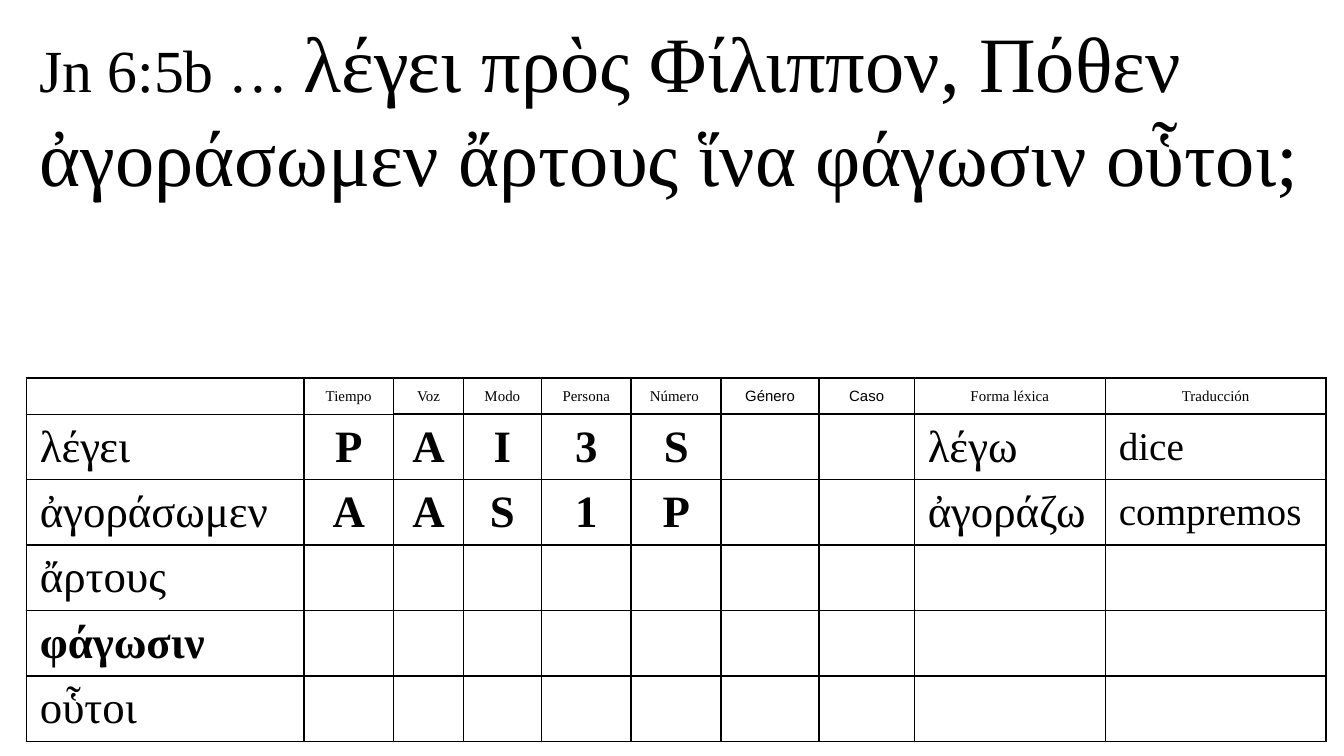
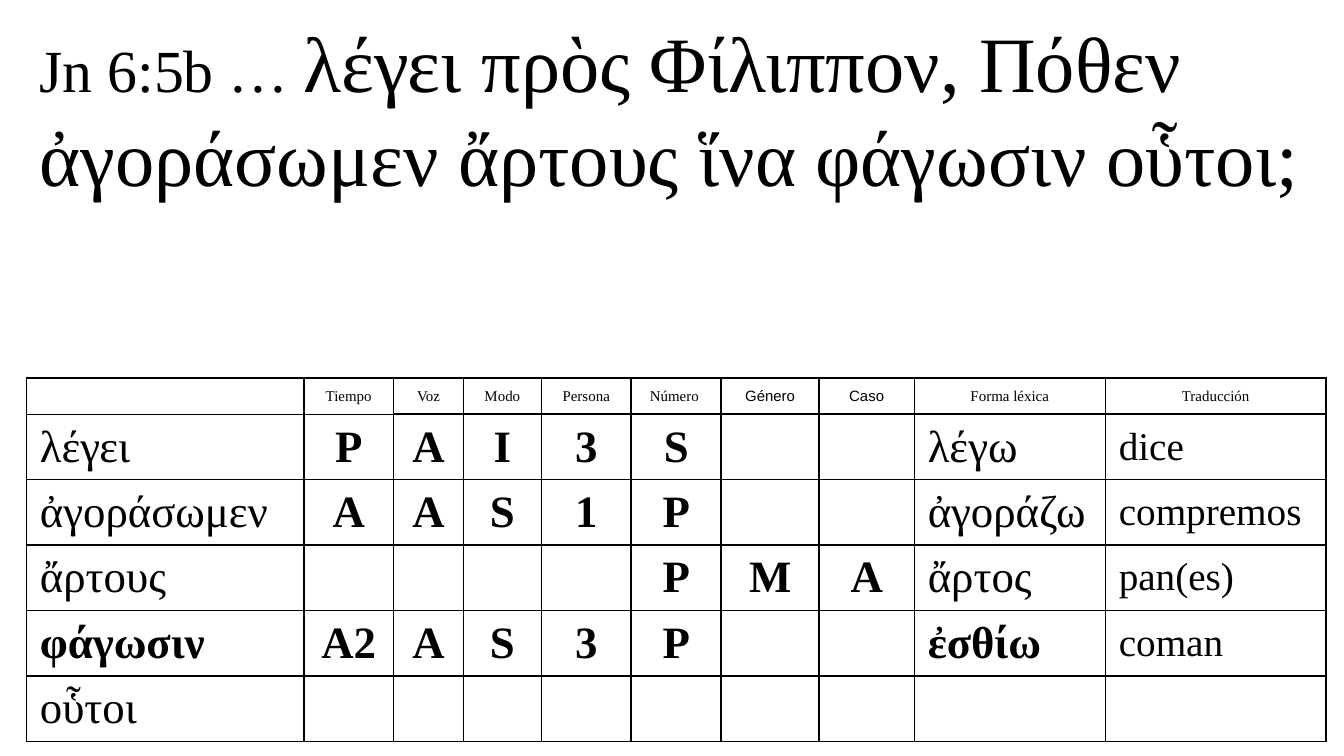
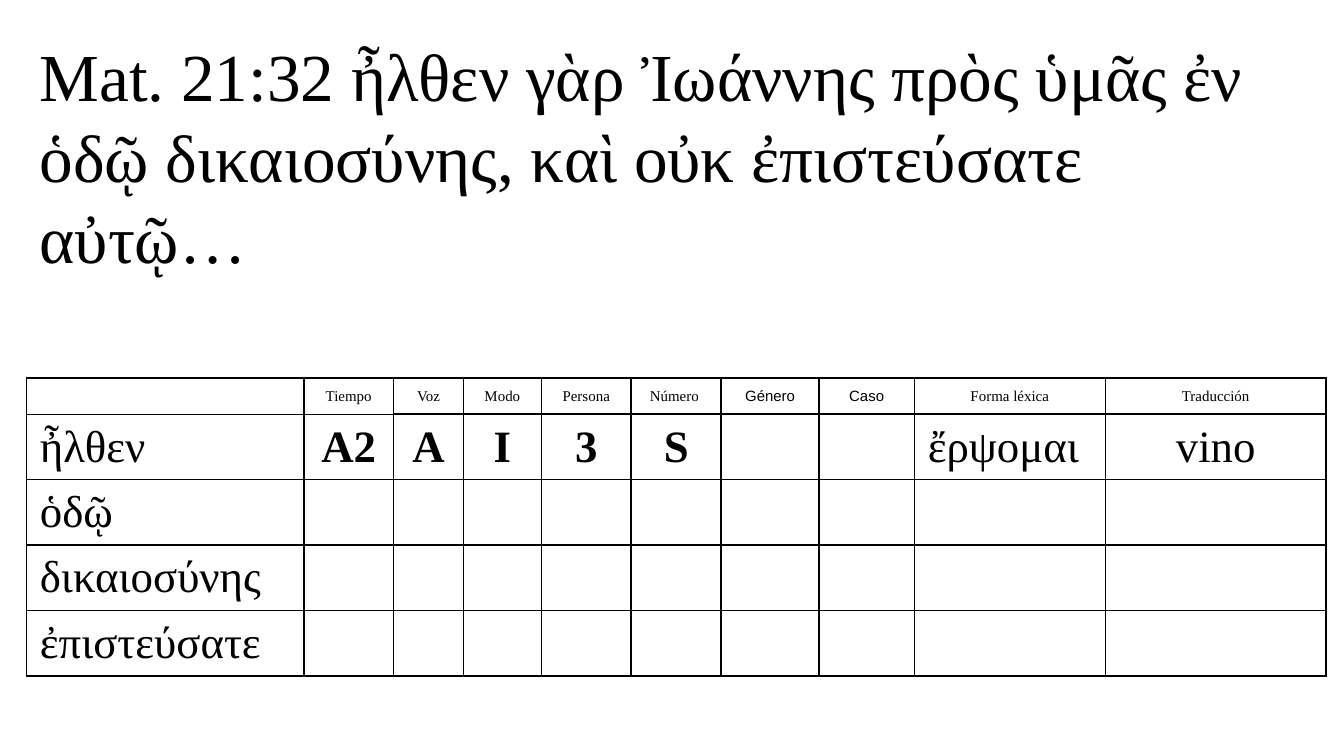
from lxml import etree
from pptx import Presentation
from pptx.dml.color import RGBColor
from pptx.enum import text
from pptx.oxml.ns import qn
from pptx.util import Cm, Pt

BLACK = RGBColor(0, 0, 0)
SERIF, SANS = "Times New Roman", "Arial"

HEADERS = ["", "Tiempo", "Voz", "Modo", "Persona", "Número ", "Género", "Caso",
           "Forma léxica", "Traducción"]
SANS_HEADERS = ("Género", "Caso")
BOLD_WORDS = ("φάγωσιν", "ἐσθίω")
COL_WIDTHS = [5.24, 1.7, 1.32, 1.47, 1.7, 1.7, 1.85, 1.8, 3.61, 4.17]
HEADER_H, ROW_H = 0.69, 1.21
LEFT, TABLE_TOP, TITLE_W = 0.5, 7.14, 24.4
WORD, LEXICAL, MEANING = 0, 8, 9

JOHN_TITLE = [("Jn 6:5b … ", 32),
              ("λέγει πρὸς Φίλιππον, Πόθεν ἀγοράσωμεν ἄρτους ἵνα φάγωσιν οὗτοι;", 42)]
MATTHEW_TITLE = [("Mat. 21:32 ἦλθεν γὰρ Ἰωάννης πρὸς ὑμᾶς ἐν ὁδῷ δικαιοσύνης, "
                  "καὶ οὐκ ἐπιστεύσατε αὐτῷ…", 36)]

JOHN_ROWS = [
    ["λέγει", "P", "A", "I", "3", "S", "", "", "λέγω", "dice"],
    ["ἀγοράσωμεν", "A", "A", "S", "1", "P", "", "", "ἀγοράζω", "compremos"],
    ["ἄρτους", "", "", "", "", "P", "M", "A", "ἄρτος", "pan(es)"],
    ["φάγωσιν", "A2", "A", "S", "3", "P", "", "", "ἐσθίω", "coman"],
    ["οὗτοι"],
]
MATTHEW_ROWS = [
    ["ἦλθεν", "A2", "A", "I", "3", "S", "", "", "ἔρψομαι", "vino"],
    ["ὁδῷ"],
    ["δικαιοσύνης"],
    ["ἐπιστεύσατε"],
]


def parsed_up_to(rows, count):
    return rows[:count] + [row[:1] for row in rows[count:]]


SLIDES = [
    dict(title=JOHN_TITLE, top=0.15, height=3.84, rows=parsed_up_to(JOHN_ROWS, 2),
         meaning=(21, False)),
    dict(title=JOHN_TITLE, top=0.15, height=3.84, rows=JOHN_ROWS, meaning=(21, False)),
    dict(title=MATTHEW_TITLE, top=0.53, height=3.33, rows=MATTHEW_ROWS, meaning=(24, True)),
]


def set_font(font, size, name=SERIF, bold=False):
    font.size, font.name, font.bold = Pt(size), name, bold
    font.color.rgb = BLACK


def add_title(s, runs, top, height):
    tf = s.shapes.add_textbox(Cm(LEFT), Cm(top), Cm(TITLE_W), Cm(height)).text_frame
    tf.word_wrap = True
    tf.auto_size = text.MSO_AUTO_SIZE.SHAPE_TO_FIT_TEXT
    p = tf.paragraphs[0]
    for words, size in runs:
        r = p.add_run()
        r.text = words
        set_font(r.font, size)


def set_borders(cell, row, col):
    across = 0.75 if col < 2 else 1
    widths = {"L": 1, "R": 1, "T": across if row else 1, "B": across}
    tcPr = cell._tc.get_or_add_tcPr()
    for i, (side, width) in enumerate(widths.items()):
        ln = etree.Element(qn(f"a:ln{side}"), w=str(Pt(width)))
        fill = etree.SubElement(ln, qn("a:solidFill"))
        etree.SubElement(fill, qn("a:srgbClr"), val=str(BLACK))
        tcPr.insert(i, ln)


def fill_cell(cell, words, row, col, meaning):
    cell.fill.background()
    cell.vertical_anchor = text.MSO_ANCHOR.MIDDLE
    cell.margin_top = cell.margin_bottom = Cm(0.11)
    if words == "compremos":
        cell.margin_right = 0
    p = cell.text_frame.paragraphs[0]
    size, centred = 24, col not in (WORD, LEXICAL)
    if row == 0:
        size, centred = 8, True
    elif col == MEANING:
        size, centred = meaning
    if words:
        p.text = words
    bold = row > 0 and (WORD < col < LEXICAL or words in BOLD_WORDS)
    set_font(p.font, size, SANS if words in SANS_HEADERS else SERIF, bold)
    p.alignment = text.PP_ALIGN.CENTER if centred else text.PP_ALIGN.LEFT
    set_borders(cell, row, col)


def add_parsing_table(s, rows, meaning):
    height = HEADER_H + ROW_H * len(rows)
    table = s.shapes.add_table(len(rows) + 1, len(HEADERS), Cm(LEFT), Cm(TABLE_TOP),
                               Cm(sum(COL_WIDTHS)), Cm(height)).table
    table.first_row = table.horz_banding = False
    for column, width in zip(table.columns, COL_WIDTHS):
        column.width = Cm(width)
    for i, row in enumerate([HEADERS] + rows):
        table.rows[i].height = Cm(ROW_H if i else HEADER_H)
        for j in range(len(HEADERS)):
            fill_cell(table.cell(i, j), row[j] if j < len(row) else "", i, j, meaning)


def main():
    prs = Presentation()
    prs.slide_width, prs.slide_height = Cm(25.4), Cm(14.29)
    for content in SLIDES:
        s = prs.slides.add_slide(prs.slide_layouts[6])
        add_title(s, content["title"], content["top"], content["height"])
        add_parsing_table(s, content["rows"], content["meaning"])
    prs.save("out.pptx")


if __name__ == "__main__":
    main()
